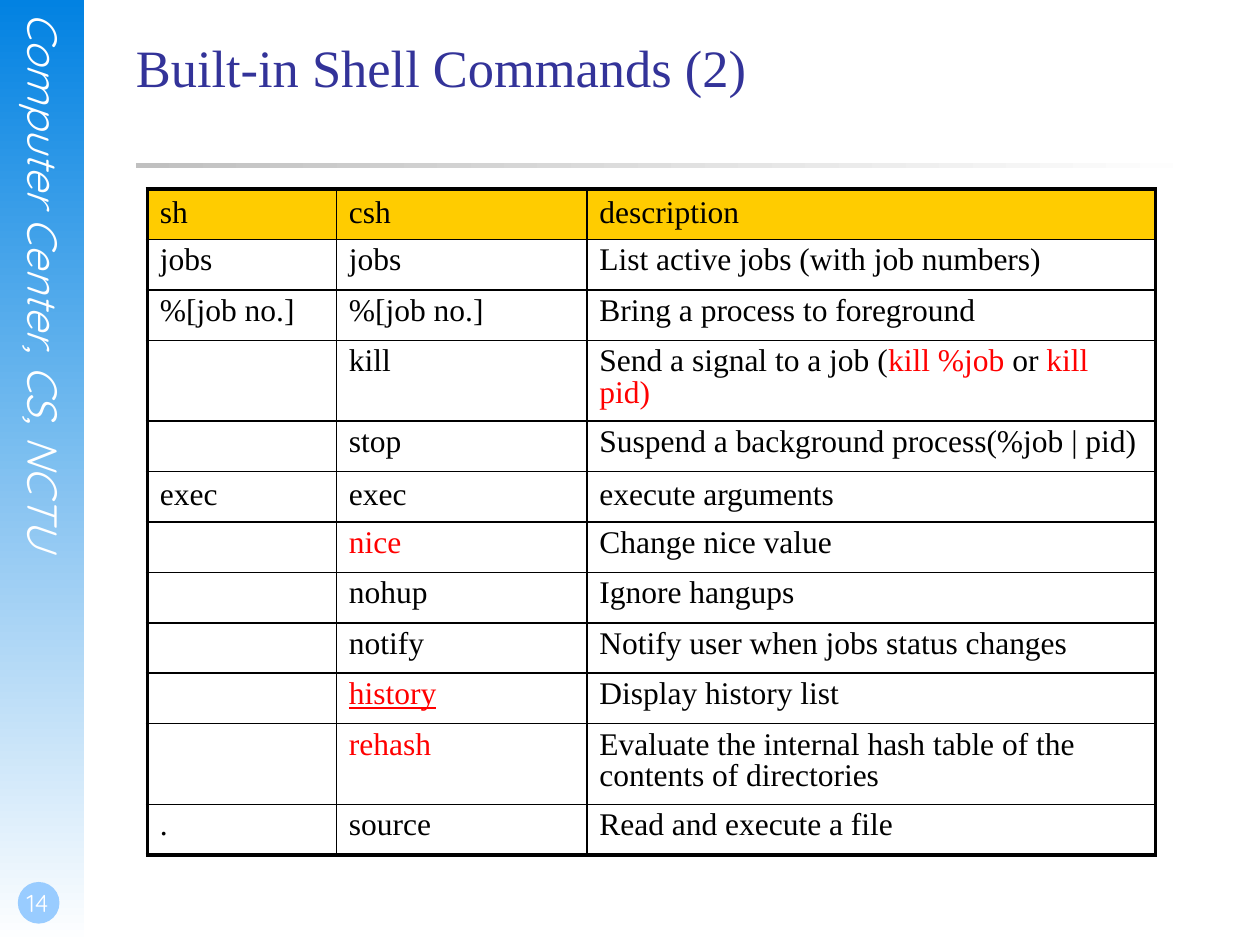
from lxml import etree
from pptx import Presentation
from pptx import util as u
from pptx.dml.color import RGBColor
from pptx.enum import shapes, text
from pptx.oxml import ns

BLACK = RGBColor(0, 0, 0)
WHITE = RGBColor(255, 255, 255)
RED = RGBColor(255, 0, 0)
GOLD = RGBColor(0xFF, 0xCC, 0)
NAVY = RGBColor(0x33, 0x33, 0x99)
BLUE = RGBColor(0x02, 0x82, 0xE2)
SKY = RGBColor(0x99, 0xCC, 0xFF)
GREY = RGBColor(0xC0, 0xC0, 0xC0)
SANS, SERIF = "Quicksand", "Times New Roman"

COLS = [3.81, 5.05, 11.46]
HIGH, TALL = 1.016, 1.63
ROWS = [
    ("sh", "csh", "description"),
    ("jobs", "jobs", "List active jobs (with job numbers)"),
    ("%[job no.]", "%[job no.]", "Bring a process to foreground"),
    ("", "kill", "Send a signal to a job (*kill %job* or *kill pid)*"),
    ("", "stop", "Suspend a background process(%job | pid)"),
    ("exec", "exec", "execute arguments"),
    ("", "*nice*", "Change nice value"),
    ("", "nohup", "Ignore hangups"),
    ("", "notify", "Notify user when jobs status changes"),
    ("", "*history*", "Display history list"),
    ("", "*rehash*", "Evaluate the internal hash table of the contents of directories"),
    (".", "source", "Read and execute a file"),
]
LOOSE = ("sh", "exec")


def style(para, face, size, hue):
    para.font.name = face
    para.font.size = u.Pt(size)
    para.font.color.rgb = hue


def shape(page, kind, x, y, w, h, hue, angle=None):
    item = page.shapes.add_shape(kind, u.Cm(x), u.Cm(y), u.Cm(w), u.Cm(h))
    item.shadow.inherit = False
    item.line.fill.background()
    if angle is None:
        item.fill.solid()
        item.fill.fore_color.rgb = hue
    else:
        item.fill.gradient()
        item.fill.gradient_angle = angle
        for stop, shade in zip(item.fill.gradient_stops, (hue, WHITE)):
            stop.color.rgb = shade
    return item


def label(page, x, y, w, h, words, face, size, hue):
    box = page.shapes.add_textbox(u.Cm(x), u.Cm(y), u.Cm(w), u.Cm(h))
    frame = box.text_frame
    frame.word_wrap = True
    frame.margin_left = frame.margin_top = 0
    frame.margin_right = frame.margin_bottom = 0
    frame.text = words
    style(frame.paragraphs[0], face, size, hue)
    return box


def sidebar(page, x, y, w, h):
    shape(page, shapes.MSO_SHAPE.RECTANGLE, x, y, w, h, BLUE, 270)
    name = label(page, x + 0.38, y + 0.25, 1.02, 12.98,
                 "Computer Center, CS, NCTU", SANS, 24, WHITE)
    name.text_frame.paragraphs[0].font.italic = True
    name.element.txBody.bodyPr.set("vert", "eaVert")
    shape(page, shapes.MSO_SHAPE.OVAL, x + 0.36, y + h - 1.27, 0.84, 0.84, SKY)
    frame = label(page, x, y + h - 1.7, 1.47, 1.27, "14", SANS, 14, WHITE).text_frame
    frame.margin_left, frame.margin_bottom = u.Cm(0.05), u.Cm(0.13)
    frame.vertical_anchor = text.MSO_ANCHOR.BOTTOM
    frame.paragraphs[0].alignment = text.PP_ALIGN.CENTER


def heading(page, x, y, w, h):
    shape(page, shapes.MSO_SHAPE.RECTANGLE, x, y + 2.57, w, 0.1, GREY, 0)
    label(page, x, y, w, h, "Built-in Shell Commands (2)", SERIF, 30, NAVY)


def border(cell, edges):
    props = cell._tc.get_or_add_tcPr()
    for side, outer in zip("LRTB", edges):
        line = etree.SubElement(props, ns.qn("a:ln" + side))
        line.set("w", str(u.Pt(2.25 if outer else 1)))
        fill = etree.SubElement(line, ns.qn("a:solidFill"))
        etree.SubElement(fill, ns.qn("a:srgbClr")).set("val", str(BLACK))


def write(cell, words, loose):
    para = cell.text_frame.paragraphs[0]
    style(para, SERIF, 18, BLACK)
    if not loose:
        para.line_spacing = 0.9
    for spot, part in enumerate(words.split("*")):
        if part:
            run = para.add_run()
            run.text = part
            if spot % 2:
                run.font.color.rgb = RED
                run.font.underline = True if part == "history" else None


def grid(page, x, y, w, h):
    table = page.shapes.add_table(len(ROWS), len(COLS), u.Cm(x), u.Cm(y),
                                  u.Cm(w), u.Cm(h)).table
    table.first_row = table.horz_banding = False
    for col, wide in zip(table.columns, COLS):
        col.width = u.Cm(wide)
    for r, words in enumerate(ROWS):
        table.rows[r].height = u.Cm(TALL if "*rehash*" in words else HIGH)
        for c, word in enumerate(words):
            cell = table.cell(r, c)
            border(cell, (c == 0, c == len(COLS) - 1, r == 0, r == len(ROWS) - 1))
            if r == 0:
                cell.fill.solid()
                cell.fill.fore_color.rgb = GOLD
            else:
                cell.fill.background()
            write(cell, word, words[0] in LOOSE)


def main():
    deck = Presentation()
    deck.slide_width, deck.slide_height = u.Cm(25.4), u.Cm(19.05)
    page = deck.slides.add_slide(deck.slide_layouts[6])
    sidebar(page, 0, 0, 1.7, 19.05)
    heading(page, 2.74, 0.71, 21.59, 3.18)
    grid(page, 2.97, 3.81, 20.32, 12.8)
    deck.save("out.pptx")


if __name__ == "__main__":
    main()
